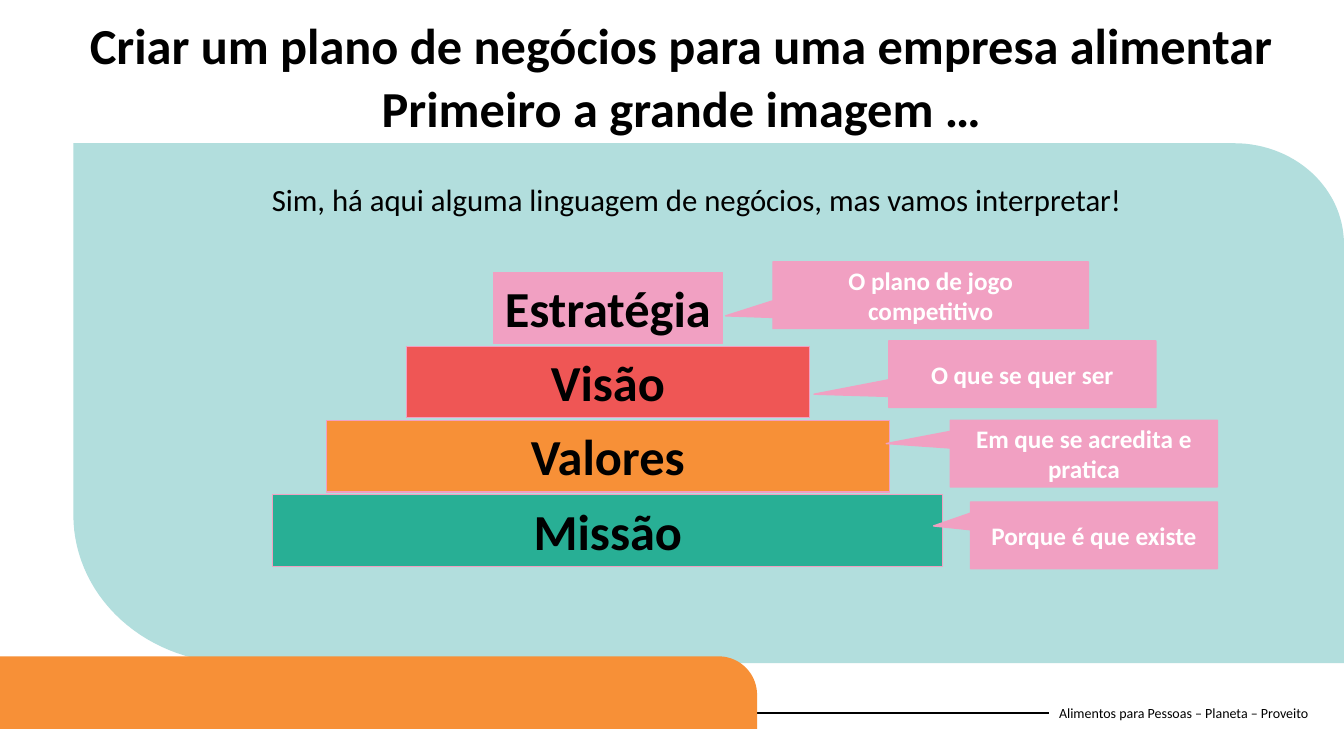
import math

import lxml.etree
import pptx
import pptx.dml.color
import pptx.enum.shapes
import pptx.enum.text
import pptx.oxml.ns
import pptx.util
from pptx.util import Cm

TITLE = ("Criar um plano de negócios para uma empresa alimentar",
         "Primeiro a grande imagem …")
INTRO = "Sim, há aqui alguma linguagem de negócios, mas vamos interpretar!"
FOOTER = "Alimentos para Pessoas – Planeta – Proveito"
STEPS = [
    ("Estratégia", 5.77, "pink"),
    ("Visão", 10.16, "red"),
    ("Valores", 14.2, "orange"),
    ("Missão", 16.89, "green"),
]
CALLOUTS = [
    ("O plano de jogo competitivo", 19.48, 6.6, 7.95, (-0.65, 0.31)),
    ("O que se quer ser", 22.4, 8.59, 6.73, (-0.78, 0.3)),
    ("Em que se acredita e pratica", 23.95, 10.59, 6.73, (-0.74, -0.15)),
    ("Porque é que existe", 24.46, 12.65, 6.22, (-0.65, -0.14)),
]
PANEL = (1.85, 3.61, 32.02, 13.1)
BANNER = (0, 16.54, 19.08, 1.83)
STEP_CENTRE, STEP_TOP, STEP_PITCH, STEP_HEIGHT = 15.32, 6.86, 1.87, 1.8
CALLOUT_HEIGHT = 1.68


class Theme:
    font = "Calibri"
    colours = {"black": "000000", "white": "FFFFFF", "pink": "F1A0C2",
               "red": "EF5655", "orange": "F79037", "green": "28AF95",
               "aqua": "B2DEDD"}
    heading, intro, callout, footer = 36, 22, 18, 10

    @classmethod
    def rgb(cls, name):
        return pptx.dml.color.RGBColor.from_string(cls.colours[name])


SHAPE = pptx.enum.shapes.MSO_SHAPE
ANCHOR = pptx.enum.text.MSO_ANCHOR
ALIGN = pptx.enum.text.PP_ALIGN
FIT = pptx.enum.text.MSO_AUTO_SIZE


def write(box, lines, size, colour="black", bold=False, align=ALIGN.LEFT,
          anchor=ANCHOR.TOP, fit=FIT.NONE):
    frame = box.text_frame
    frame.text = "\n".join(lines)
    frame.word_wrap = True
    frame.auto_size = fit
    frame.vertical_anchor = anchor
    for para in frame.paragraphs:
        para.alignment = align
        para.font.name = Theme.font
        para.font.size = pptx.util.Pt(size)
        para.font.bold = bold
        para.font.color.rgb = Theme.rgb(colour)


def paint(shape, fill, line=None, width=0.75):
    shape.shadow.inherit = False
    shape.fill.solid()
    shape.fill.fore_color.rgb = Theme.rgb(fill)
    if line:
        shape.line.color.rgb = Theme.rgb(line)
        shape.line.width = pptx.util.Pt(width)
    else:
        shape.line.fill.background()


def arc(centre_x, centre_y, radius_x, radius_y, start):
    angles = [math.radians(start + step * 3) for step in range(31)]
    return [(centre_x + radius_x * math.cos(angle),
             centre_y + radius_y * math.sin(angle)) for angle in angles]


def add_rounded(page, place, fill, top_right, bottom_left=(0, 0)):
    left, top, width, height = place
    right, bottom = left + width, top + height
    points = [(left, top)]
    points += arc(right - top_right[0], top + top_right[1], *top_right, -90)
    points.append((right, bottom))
    if any(bottom_left):
        points += arc(left + bottom_left[0], bottom - bottom_left[1],
                      *bottom_left, 90)
    else:
        points.append((left, bottom))
    outline = [(Cm(x), Cm(y)) for x, y in points]
    builder = page.shapes.build_freeform(*outline[0])
    builder.add_line_segments(outline[1:], close=True)
    paint(builder.convert_to_shape(), fill)


def add_frame(page):
    footer = page.shapes.add_textbox(Cm(26.44), Cm(17.45), Cm(6.93), Cm(1.02))
    write(footer, [FOOTER], Theme.footer, anchor=ANCHOR.MIDDLE)
    rule = page.shapes.add_connector(
        pptx.enum.shapes.MSO_CONNECTOR.STRAIGHT,
        Cm(0), Cm(17.96), Cm(26.44), Cm(17.96))
    rule.end_connect(footer, 1)
    rule.line.color.rgb = Theme.rgb("black")
    rule.line.width = pptx.util.Pt(1.5)
    lxml.etree.SubElement(rule._element.spPr,
                          pptx.oxml.ns.qn("a:effectLst"))
    add_rounded(page, PANEL, "aqua", (2.77, 2.54), (4.09, 3.73))
    add_rounded(page, BANNER, "orange", (0.97, 0.97))


def add_heading(page):
    title = page.shapes.title
    title.left, title.top = Cm(1.35), Cm(0.53)
    title.width, title.height = Cm(31.65), Cm(2.24)
    write(title, TITLE, Theme.heading, bold=True, align=ALIGN.CENTER)
    for para in title.text_frame.paragraphs:
        para.line_spacing = 0.8
        para.space_before = pptx.util.Pt(10)
    intro = page.shapes.add_textbox(Cm(6.6), Cm(4.42), Cm(26.39), Cm(1.19))
    write(intro, [INTRO], Theme.intro, fit=FIT.SHAPE_TO_FIT_TEXT)


def add_pyramid(page):
    for row, (label, width, fill) in enumerate(STEPS):
        step = page.shapes.add_shape(
            SHAPE.RECTANGLE, Cm(STEP_CENTRE - width / 2),
            Cm(STEP_TOP + row * STEP_PITCH), Cm(width), Cm(STEP_HEIGHT))
        paint(step, fill, "pink")
        write(step, [label], Theme.heading, bold=True, align=ALIGN.CENTER,
              fit=FIT.SHAPE_TO_FIT_TEXT)


def add_callouts(page):
    for label, left, top, width, tip in CALLOUTS:
        callout = page.shapes.add_shape(
            SHAPE.RECTANGULAR_CALLOUT, Cm(left), Cm(top), Cm(width),
            Cm(CALLOUT_HEIGHT))
        callout.adjustments[0], callout.adjustments[1] = tip
        paint(callout, "pink", "pink", 1)
        write(callout, [label], Theme.callout, "white", True, ALIGN.CENTER,
              ANCHOR.MIDDLE)


def main():
    deck = pptx.Presentation()
    deck.slide_width, deck.slide_height = Cm(33.87), Cm(19.05)
    page = deck.slides.add_slide(deck.slide_layouts.get_by_name("Title Only"))
    add_frame(page)
    add_heading(page)
    add_pyramid(page)
    add_callouts(page)
    deck.save("out.pptx")


if __name__ == "__main__":
    main()
